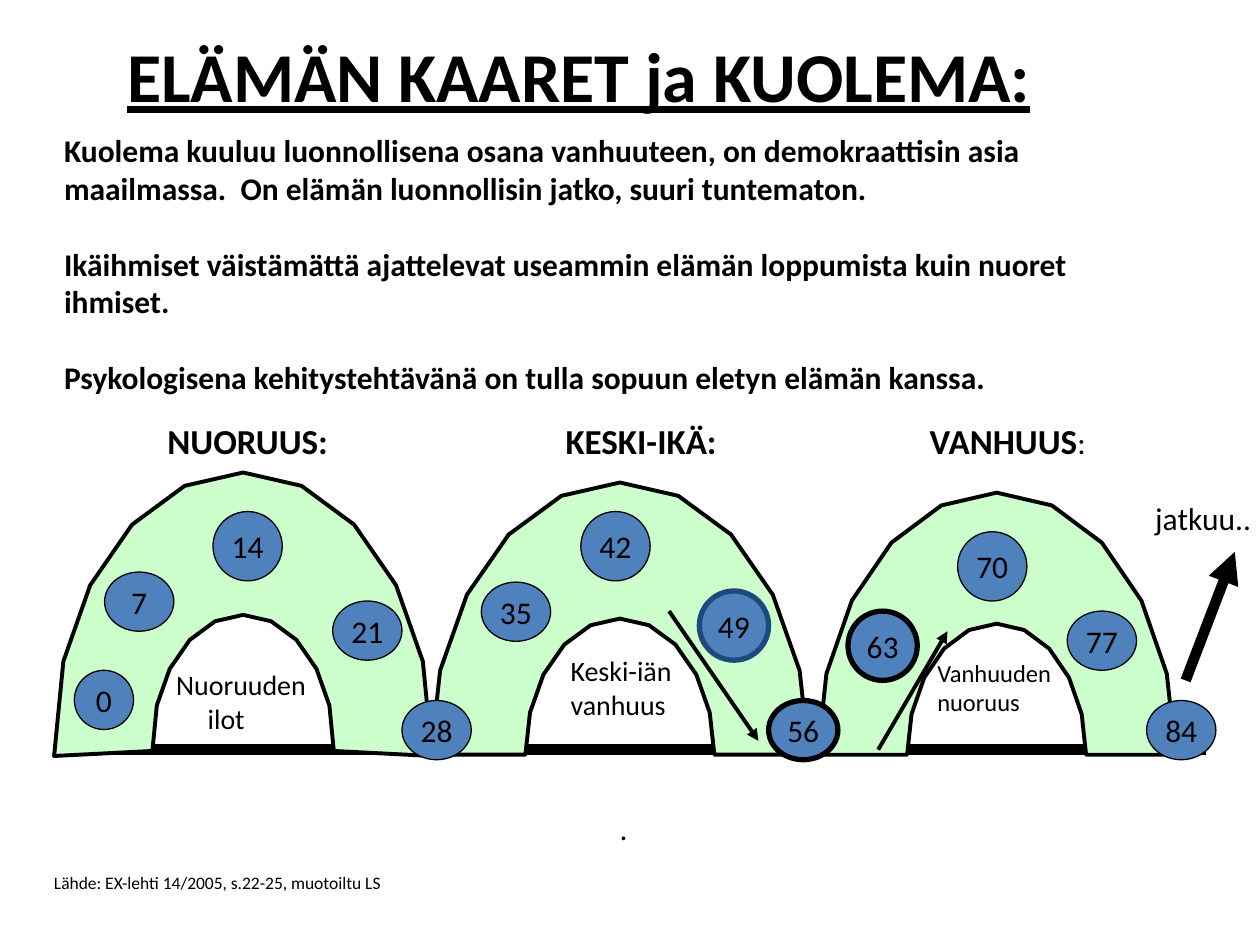
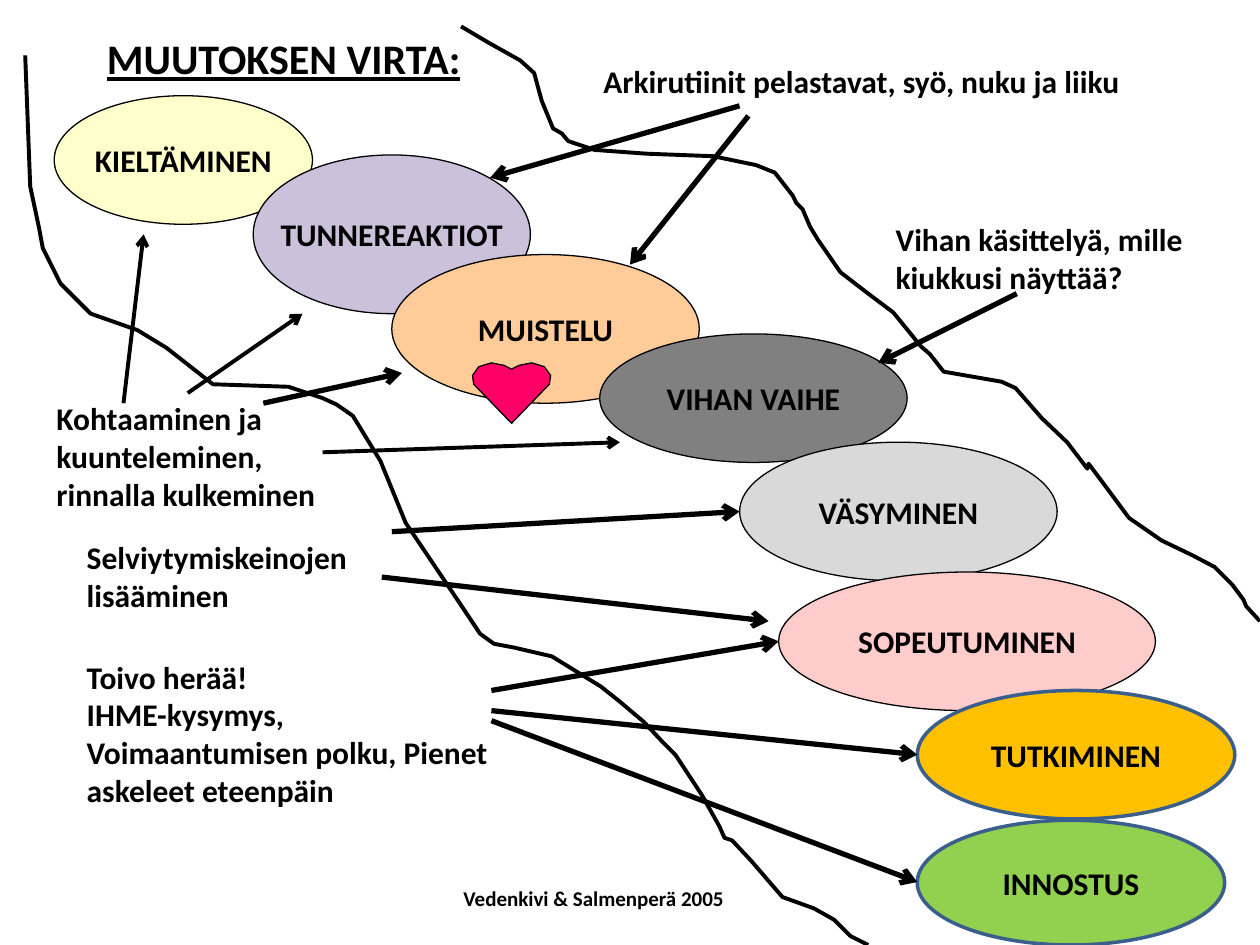
import math
from typing import NamedTuple

from lxml import etree
from pptx import Presentation
from pptx import util as u
from pptx.dml.color import RGBColor
from pptx.enum import shapes, text
from pptx.oxml import ns

FONT = "Calibri"
COLORS = {
    "ink": "000000", "arch": "CCFFCC", "age": "4F81BD", "navy": "1F497D",
    "denial": "FFFFCC", "emotion": "CCC1DA", "memory": "FFCC99", "anger": "808080",
    "fatigue": "D9D9D9", "adapting": "FFCCCC", "exploring": "FFC000",
    "enthusiasm": "92D050", "outline": "3A5F8C", "heart": "FF0066",
}
Point = tuple[float, float]


class Arch(NamedTuple):
    center: Point
    outer: Point
    inner: Point
    outer_base: float
    inner_base: float


class Bubble(NamedTuple):
    label: str
    left: float
    top: float
    width: float
    height: float
    fill: str = "age"
    line: str = "ink"
    weight: float = 0.75


class Caption(NamedTuple):
    content: str
    left: float
    top: float
    width: float
    height: float
    style: dict


class Arrow(NamedTuple):
    start: Point
    end: Point
    weight: float = 3
    head: str = "arrow"


ARCHES = [
    Arch((1.93, 5.92), (1.5, 2.17), (0.72, 1.04), 6, 5.96),
    Arch((4.92, 5.99), (1.5, 2.16), (0.75, 1.08), 5.99, 5.99),
    Arch((7.91, 5.99), (1.42, 2.08), (0.71, 1.04), 5.99, 5.99),
]
AGES = [
    Bubble("0", 0.59, 5.32, 0.47, 0.47),
    Bubble("7", 0.83, 4.54, 0.55, 0.47),
    Bubble("14", 1.69, 4.06, 0.55, 0.55),
    Bubble("21", 2.64, 4.77, 0.55, 0.47),
    Bubble("28", 3.19, 5.56, 0.55, 0.47),
    Bubble("35", 3.82, 4.62, 0.55, 0.47),
    Bubble("42", 4.61, 4.06, 0.55, 0.55),
    Bubble("49", 5.55, 4.69, 0.55, 0.55, line="navy", weight=3),
    Bubble("56", 6.1, 5.56, 0.55, 0.47, weight=3),
    Bubble("63", 6.73, 4.85, 0.55, 0.55, weight=3),
    Bubble("70", 7.6, 4.22, 0.55, 0.55),
    Bubble("77", 8.47, 4.85, 0.55, 0.47),
    Bubble("84", 9.1, 5.56, 0.55, 0.47),
]
LIFE_ARROWS = [
    Arrow((6.97, 5.95), (7.52, 5.01), 2.25, "triangle"),
    Arrow((5.31, 4.85), (6.02, 5.88), 2.25, "triangle"),
    Arrow((9.41, 5.4), (9.8, 4.38), 6, "triangle"),
]
BOLD = {"bold": True}
LIFE_CAPTIONS = [
    Caption("\tNUORUUS:\tKESKI-IKÄ:\tVANHUUS", 0.35, 2.33, 9.65, 1.38,
            {"size": 20, "bold": True, "light_tail": ":", "tabs": (0.88, 4.04, 6.93),
             "anchor": text.MSO_ANCHOR.BOTTOM}),
    Caption("Keski-iän\nvanhuus", 4.43, 5.14, 1.11, 0.64, {"size": 16}),
    Caption("Vanhuuden\nnuoruus", 7.34, 5.17, 1.19, 0.57, {"size": 14}),
    Caption("Kuolema kuuluu luonnollisena osana vanhuuteen, on demokraattisin asia "
            "maailmassa.  On elämän luonnollisin jatko, suuri tuntematon.\n"
            "Ikäihmiset väistämättä ajattelevat useammin elämän loppumista kuin nuoret ihmiset.\n"
            "Psykologisena kehitystehtävänä on tulla sopuun eletyn elämän kanssa.",
            0.41, 0.99, 8.92, 2.6, {"bold": True, "gap": 21.8}),
    Caption(".", 4.82, 6.37, 0.67, 0.4, {}),
    Caption("ELÄMÄN KAARET ja KUOLEMA:", 0.91, 0.21, 8.22, 0.77,
            {"size": 40, "bold": True, "underline": True}),
    Caption("Nuoruuden\vilot", 1.3, 5.25, 1.65, 0.64, {"size": 16, "hanging": 0.25}),
    Caption("jatkuu..", 9.07, 3.91, 1.01, 0.4, {}),
    Caption("Lähde: EX-lehti 14/2005, s.22-25, muotoiltu LS", 0.33, 6.87, 3.05, 0.27,
            {"size": 10}),
]

EARLY_PHASES = [
    Bubble("KIELTÄMINEN", 0.43, 0.76, 2.05, 1.02, "denial"),
    Bubble("TUNNEREAKTIOT", 2.01, 1.23, 2.2, 1.26, "emotion"),
    Bubble("MUISTELU", 3.11, 2.02, 2.44, 1.18, "memory"),
    Bubble("VIHAN VAIHE", 4.76, 2.65, 2.44, 1.02, "anger"),
    Bubble("VÄSYMINEN", 5.87, 3.51, 2.52, 1.1, "fatigue"),
]
LATE_PHASES = [
    Bubble("SOPEUTUMINEN", 6.18, 4.54, 2.99, 1.1, "adapting"),
    Bubble("TUTKIMINEN", 7.28, 5.48, 2.52, 1.02, "exploring", "outline", 2),
    Bubble("INNOSTUS", 7.28, 6.51, 2.44, 0.99, "enthusiasm", "outline", 2),
]
HEART_HALF = [(4.06, 2.93), (4, 2.9), (3.9, 2.88), (3.8, 2.91), (3.75, 2.98), (3.76, 3.05)]
HEART_TIP = (4.06, 3.36)
LEFT_BANK = [
    (0.2, 0.44), (0.24, 1.48), (0.31, 1.81), (0.34, 1.97), (0.48, 2.25), (0.72, 2.49),
    (1.09, 2.62), (1.32, 2.76), (1.69, 3.05), (2.29, 3.07), (2.56, 3.16), (2.67, 3.21),
    (2.8, 3.3), (3.02, 3.66), (3.22, 4.15), (3.63, 4.76), (3.81, 5.03), (3.92, 5.11),
    (4.08, 5.14), (4.38, 5.21), (4.77, 5.45), (4.92, 5.57), (5.11, 5.73), (5.25, 5.88),
    (5.36, 5.99), (5.57, 6.31), (5.71, 6.56), (5.75, 6.65), (5.81, 6.67), (5.96, 6.83),
    (6.21, 7.12), (6.46, 7.21), (6.62, 7.3), (6.75, 7.43), (6.85, 7.48), (6.89, 7.5),
]
RIGHT_BANK = [
    (3.66, 0.21), (3.88, 0.34), (4.13, 0.48), (4.24, 0.58), (4.3, 0.8), (4.39, 1.02),
    (4.46, 1.06), (4.51, 1.12), (4.72, 1.19), (5.13, 1.22), (5.66, 1.24), (6, 1.31),
    (6.15, 1.37), (6.29, 1.55), (6.32, 1.61), (6.37, 1.66), (6.43, 1.8), (6.49, 1.9),
    (6.67, 2.16), (6.89, 2.33), (7.09, 2.48), (7.31, 2.75), (7.38, 2.81), (7.49, 2.95),
    (7.95, 3.03), (8.06, 3.08), (8.27, 3.32), (8.47, 3.51), (8.63, 3.72), (8.64, 3.68),
    (8.73, 3.8), (8.96, 4.11), (9.22, 4.29), (9.47, 4.41), (9.64, 4.5), (9.78, 4.64),
    (9.87, 4.76), (9.89, 4.81), (10, 4.93),
]
CHANGE_ARROWS = [
    Arrow((5.94, 0.92), (5, 2.1)),
    Arrow((3.9, 5.48), (6.18, 5.09)),
    Arrow((3.9, 5.64), (7.28, 5.99)),
    Arrow((3.9, 5.72), (7.28, 7)),
    Arrow((8.07, 2.33), (6.97, 2.88)),
    Arrow((3.11, 4.22), (5.87, 4.06)),
    Arrow((5.87, 0.84), (3.89, 1.41)),
    Arrow((3.03, 4.58), (6.1, 4.93)),
    Arrow((0.98, 3.2), (1.14, 1.86), 2.25),
    Arrow((1.49, 3.12), (2.4, 2.49), 2.25),
    Arrow((2.09, 3.2), (3.19, 2.96)),
    Arrow((2.56, 3.59), (4.92, 3.51), 2.25),
]
CHANGE_CAPTIONS = [
    Caption("MUUTOKSEN VIRTA:", 0.75, 0.21, 3.61, 0.5,
            {"size": 24, "bold": True, "underline": True}),
    Caption("Vedenkivi & Salmenperä 2005", 3.58, 6.98, 2.46, 0.3, {"bold": True, "size": 12}),
    Caption("Arkirutiinit pelastavat, syö, nuku ja liiku", 4.69, 0.44, 4.33, 0.4, BOLD),
    Caption("Toivo herää!\nIHME-kysymys, Voimaantumisen polku, Pienet askeleet eteenpäin",
            0.59, 5.17, 3.56, 1.62, BOLD),
    Caption("Vihan käsittelyä, mille\nkiukkusi näyttää?", 7.01, 1.7, 2.99, 0.71, BOLD),
    Caption("Selviytymiskeinojen\nlisääminen", 0.59, 4.22, 2.44, 0.71, BOLD),
    Caption("Kohtaaminen ja\nkuunteleminen,\nrinnalla kulkeminen", 0.35, 3.12, 2.27, 1.01, BOLD),
]


def rgb(name: str) -> RGBColor:
    return RGBColor.from_string(COLORS[name])


def write_text(frame, content: str, *, size: float = 18, bold: bool = False,
               underline: bool = False, centered: bool = False, gap: float = 0,
               hanging: float = 0, light_tail: str = "", tabs: tuple[float, ...] = (),
               anchor=text.MSO_ANCHOR.TOP) -> None:
    frame.text = content
    frame.vertical_anchor = anchor
    if light_tail:
        frame.paragraphs[-1].add_run().text = light_tail
    for index, paragraph in enumerate(frame.paragraphs):
        paragraph.alignment = text.PP_ALIGN.CENTER if centered else text.PP_ALIGN.LEFT
        paragraph.space_before = u.Pt(gap if index else 0)
        properties = paragraph._p.get_or_add_pPr()
        if hanging:
            properties.set("marL", str(u.Inches(hanging)))
            properties.set("indent", str(-u.Inches(hanging)))
        if tabs:
            stops = etree.SubElement(properties, ns.qn("a:tabLst"))
            for tab in tabs:
                etree.SubElement(stops, ns.qn("a:tab"), pos=str(u.Inches(tab)), algn="l")
        for run in paragraph.runs:
            run.font.name = FONT
            run.font.size = u.Pt(size)
            run.font.bold = bold
            run.font.underline = underline
            run.font.color.rgb = rgb("ink")
    if light_tail:
        tail = frame.paragraphs[-1].runs[-1].font
        tail.size, tail.bold = u.Pt(18), False


def add_caption(slide, caption: Caption) -> None:
    box = slide.shapes.add_textbox(*map(u.Inches, caption[1:5]))
    box.text_frame.word_wrap = True
    write_text(box.text_frame, caption.content, **caption.style)


def paint(shape, fill: str | None, line: str = "ink", weight: float = 2.25) -> None:
    shape.shadow.inherit = False
    if fill:
        shape.fill.solid()
        shape.fill.fore_color.rgb = rgb(fill)
    else:
        shape.fill.background()
    shape.line.color.rgb = rgb(line)
    shape.line.width = u.Pt(weight)


def add_bubble(slide, bubble: Bubble, bold: bool = False) -> None:
    oval = slide.shapes.add_shape(shapes.MSO_SHAPE.OVAL, *map(u.Inches, bubble[1:5]))
    paint(oval, bubble.fill, bubble.line, bubble.weight)
    oval.text_frame.word_wrap = False
    write_text(oval.text_frame, bubble.label, bold=bold, centered=True,
               anchor=text.MSO_ANCHOR.MIDDLE)


def add_arrow(slide, arrow: Arrow) -> None:
    connector = slide.shapes.add_connector(
        shapes.MSO_CONNECTOR.STRAIGHT, *map(u.Inches, arrow.start + arrow.end))
    connector.line.color.rgb = rgb("ink")
    connector.line.width = u.Pt(arrow.weight)
    outline = connector.line._get_or_add_ln()
    etree.SubElement(outline, ns.qn("a:tailEnd"), type=arrow.head)
    etree.SubElement(connector._element.spPr, ns.qn("a:effectLst"))


def add_outline(slide, points: list[Point], fill: str | None = None, weight: float = 2.25) -> None:
    corners = [(u.Inches(x), u.Inches(y)) for x, y in points]
    builder = slide.shapes.build_freeform(*corners[0])
    builder.add_line_segments(corners[1:], close=fill is not None)
    paint(builder.convert_to_shape(), fill, weight=weight)


def half_ellipse(center: Point, radii: Point, steps: int = 10) -> list[Point]:
    angles = [math.pi * step / steps for step in range(steps + 1)]
    return [(center[0] - radii[0] * math.cos(a), center[1] - radii[1] * math.sin(a))
            for a in angles]


def add_arch(slide, arch: Arch) -> None:
    outer = half_ellipse(arch.center, arch.outer)
    inner = half_ellipse(arch.center, arch.inner)[::-1]
    outer[0], outer[-1] = [(x, arch.outer_base) for x, _ in (outer[0], outer[-1])]
    inner[0], inner[-1] = [(x, arch.inner_base) for x, _ in (inner[0], inner[-1])]
    add_outline(slide, outer + inner, "arch")


def add_heart(slide) -> None:
    right = [(2 * HEART_TIP[0] - x, y) for x, y in HEART_HALF[:0:-1]]
    add_outline(slide, [*HEART_HALF, HEART_TIP, *right], "heart", 0.75)


def build_life_arches(slide) -> None:
    add_arrow(slide, Arrow((0.43, 5.95), (9.57, 5.95), 6, "none"))
    for arch in ARCHES:
        add_arch(slide, arch)
    for age in AGES:
        add_bubble(slide, age)
    for arrow in LIFE_ARROWS:
        add_arrow(slide, arrow)
    for caption in LIFE_CAPTIONS:
        add_caption(slide, caption)


def build_change_river(slide) -> None:
    for phase in EARLY_PHASES:
        add_bubble(slide, phase, bold=True)
    add_heart(slide)
    for bank in (LEFT_BANK, RIGHT_BANK):
        add_outline(slide, bank)
    for phase in LATE_PHASES:
        add_bubble(slide, phase, bold=True)
    for arrow in CHANGE_ARROWS:
        add_arrow(slide, arrow)
    for caption in CHANGE_CAPTIONS:
        add_caption(slide, caption)


def main() -> None:
    deck = Presentation()
    deck.slide_width, deck.slide_height = u.Inches(10), u.Inches(7.5)
    for build in (build_life_arches, build_change_river):
        build(deck.slides.add_slide(deck.slide_layouts[6]))
    deck.save("out.pptx")


if __name__ == "__main__":
    main()
